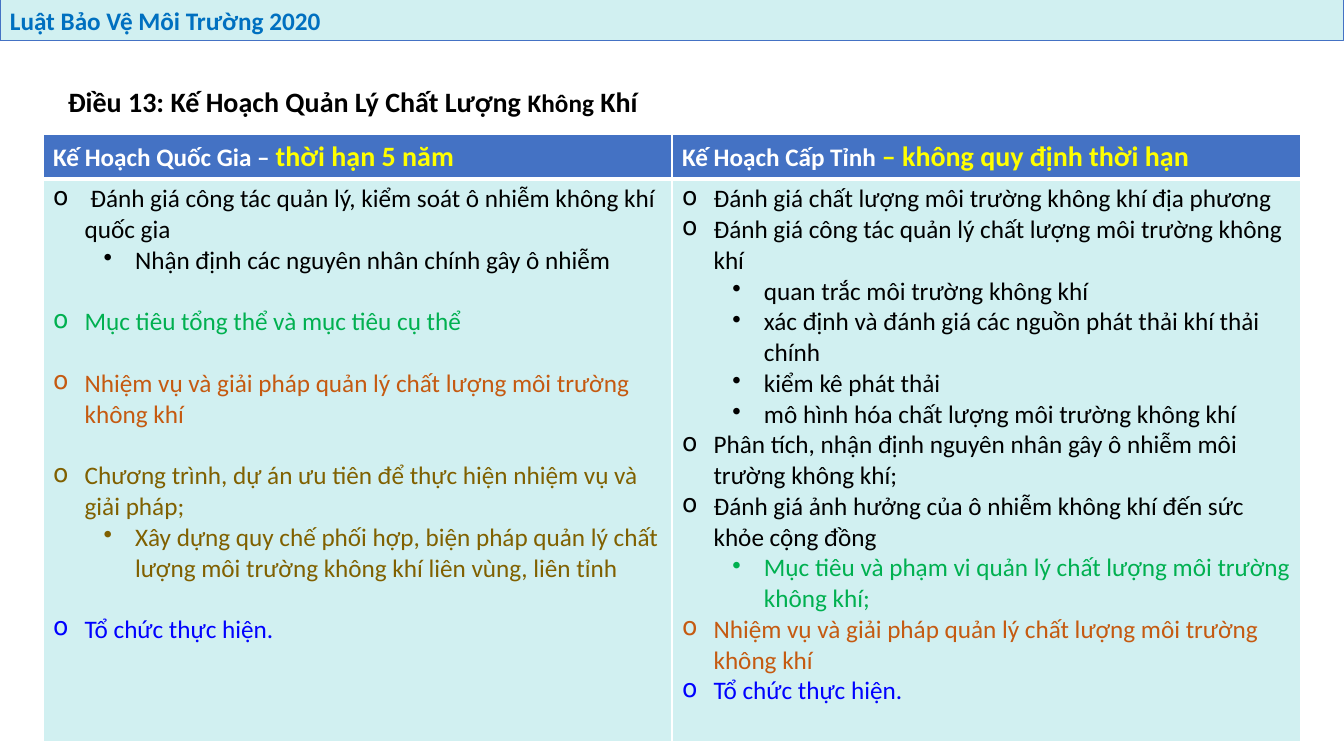
"""Build the slide comparing national and provincial air quality plans."""
from dataclasses import dataclass

from lxml import etree
from pptx import Presentation
from pptx import util as u
from pptx.dml.color import RGBColor
from pptx.enum import shapes, text
from pptx.oxml.ns import qn


@dataclass(frozen=True)
class Theme:
    """Colours, type sizes and font of the slide."""
    font: str = "Calibri"
    large: int = 20
    normal: int = 18
    gap: int = 22
    white: str = "FFFFFF"
    black: str = "000000"
    yellow: str = "FFFF00"
    accent: str = "4472C4"
    pale: str = "D1F0F1"
    banner: str = "0070C0"
    green: str = "00B050"
    orange: str = "C55A11"
    olive: str = "806000"
    blue: str = "0000FF"


T = Theme()
PX = 9525
LEVEL_MARKS = ((30, "o"), (78, "•"))
HANGING = 30
HEADERS = (
    (("Kế Hoạch Quốc Gia – ", T.normal, T.white), ("thời hạn 5 năm", T.large, T.yellow)),
    (("Kế Hoạch Cấp Tỉnh ", T.normal, T.white), ("– không quy định thời hạn", T.large, T.yellow)),
)
NATIONAL = (
    (0, " Đánh giá công tác quản lý, kiểm soát ô nhiễm không khí quốc gia", T.black),
    (1, "Nhận định các nguyên nhân chính gây ô nhiễm", T.black),
    (0, "Mục tiêu tổng thể và mục tiêu cụ thể", T.green),
    (0, "Nhiệm vụ và giải pháp quản lý chất lượng môi trường không khí", T.orange),
    (0, "Chương trình, dự án ưu tiên để thực hiện nhiệm vụ và giải pháp;", T.olive),
    (1, "Xây dựng quy chế phối hợp, biện pháp quản lý chất lượng môi trường "
        "không khí liên vùng, liên tỉnh", T.olive),
    (0, "Tổ chức thực hiện.", T.blue),
)
PROVINCIAL = (
    (0, "Đánh giá chất lượng môi trường không khí địa phương", T.black),
    (0, "Đánh giá công tác quản lý chất lượng môi trường không khí", T.black),
    (1, "quan trắc môi trường không khí", T.black),
    (1, "xác định và đánh giá các nguồn phát thải khí thải chính", T.black),
    (1, "kiểm kê phát thải", T.black),
    (1, "mô hình hóa chất lượng môi trường không khí", T.black),
    (0, "Phân tích, nhận định nguyên nhân gây ô nhiễm môi trường không khí;", T.black),
    (0, "Đánh giá ảnh hưởng của ô nhiễm không khí đến sức khỏe cộng đồng", T.black),
    (1, "Mục tiêu và phạm vi quản lý chất lượng môi trường không khí;", T.green),
    (0, "Nhiệm vụ và giải pháp quản lý chất lượng môi trường không khí", T.orange),
    (0, "Tổ chức thực hiện.", T.blue),
)


def px(n):
    """Turn pixels into EMU."""
    return u.Emu(n * PX)


def format_font(font, size, color, bold):
    """Set face, size, colour and weight of a font."""
    font.name, font.size, font.bold = T.font, u.Pt(size), bold
    font.color.rgb = RGBColor.from_string(color)


def write_runs(p, parts):
    """Write bold runs of (text, size, colour) into a left-aligned paragraph."""
    p.alignment = text.PP_ALIGN.LEFT
    for words, size, color in parts:
        r = p.add_run()
        r.text = words
        format_font(r.font, size, color, True)


def add_heading(sp, box, parts):
    """Place the title placeholder and write its runs."""
    sp.left, sp.top, sp.width, sp.height = map(px, box)
    tf = sp.text_frame
    tf.word_wrap = True
    tf.auto_size = text.MSO_AUTO_SIZE.NONE
    tf.vertical_anchor = text.MSO_ANCHOR.TOP
    write_runs(tf.paragraphs[0], parts)


def add_banner(slide, box, parts):
    """Add the outlined strip across the top of the slide."""
    sp = slide.shapes.add_shape(shapes.MSO_SHAPE.RECTANGLE, *map(px, box))
    sp.shadow.inherit = False
    sp.fill.solid()
    sp.fill.fore_color.rgb = RGBColor.from_string(T.pale)
    sp.line.color.rgb = RGBColor.from_string(T.accent)
    sp.line.width = u.Pt(0.75)
    sp.text_frame.word_wrap = True
    sp.text_frame.vertical_anchor = text.MSO_ANCHOR.MIDDLE
    write_runs(sp.text_frame.paragraphs[0], parts)


def style_cell(cell, fill, top, bottom):
    """Give a cell white borders of the given widths and a solid fill."""
    tc_pr = cell._tc.get_or_add_tcPr()
    for tag, width in (("a:lnL", 1), ("a:lnR", 1), ("a:lnT", top), ("a:lnB", bottom)):
        ln = etree.SubElement(tc_pr, qn(tag), w=str(u.Pt(width)))
        solid = etree.SubElement(ln, qn("a:solidFill"))
        etree.SubElement(solid, qn("a:srgbClr"), val=T.white)
    cell.fill.solid()
    cell.fill.fore_color.rgb = RGBColor.from_string(fill)


def write_list(tf, items, gap):
    """Write bulleted items, with a gap before each later top-level one."""
    for i, (level, words, color) in enumerate(items):
        p = tf.add_paragraph() if i else tf.paragraphs[0]
        p.text = words
        p.level = level
        p.space_before = u.Pt(gap if i and level == 0 else 0)
        indent, mark = LEVEL_MARKS[level]
        p_pr = p._p.get_or_add_pPr()
        p_pr.set("marL", str(px(indent)))
        p_pr.set("indent", str(px(-HANGING)))
        etree.SubElement(p_pr, qn("a:buChar"), char=mark)
        format_font(p.runs[0].font, T.normal, color, False)


def add_plan_table(slide, box, header_height):
    """Add the two-column table of plans."""
    table = slide.shapes.add_table(2, 2, *map(px, box)).table
    table.horz_banding = False
    table.rows[0].height = px(header_height)
    table.rows[1].height = px(box[3] - header_height)
    columns = zip(HEADERS, (NATIONAL, PROVINCIAL), (T.gap, 0))
    for col, (header, items, gap) in enumerate(columns):
        head, body = table.cell(0, col), table.cell(1, col)
        style_cell(head, T.accent, 1, 3)
        style_cell(body, T.pale, 3, 1)
        write_runs(head.text_frame.paragraphs[0], header)
        write_list(body.text_frame, items, gap)


def main():
    """Build and save the slide."""
    prs = Presentation()
    prs.slide_width, prs.slide_height = px(1280), px(720)
    slide = prs.slides.add_slide(prs.slide_layouts[5])
    add_heading(slide.shapes.title, (55, 76, 849, 42), (
        ("Điều 13: Kế Hoạch Quản Lý Chất Lượng ", T.large, T.black),
        ("Không", T.normal, T.black),
        (" Khí", T.large, T.black),
    ))
    add_plan_table(slide, (41, 128, 1198, 578), 42)
    add_banner(slide, (0, 0, 1280, 39),
               (("Luật Bảo Vệ Môi Trường 2020", T.normal, T.banner),))
    prs.save("out.pptx")


if __name__ == "__main__":
    main()
